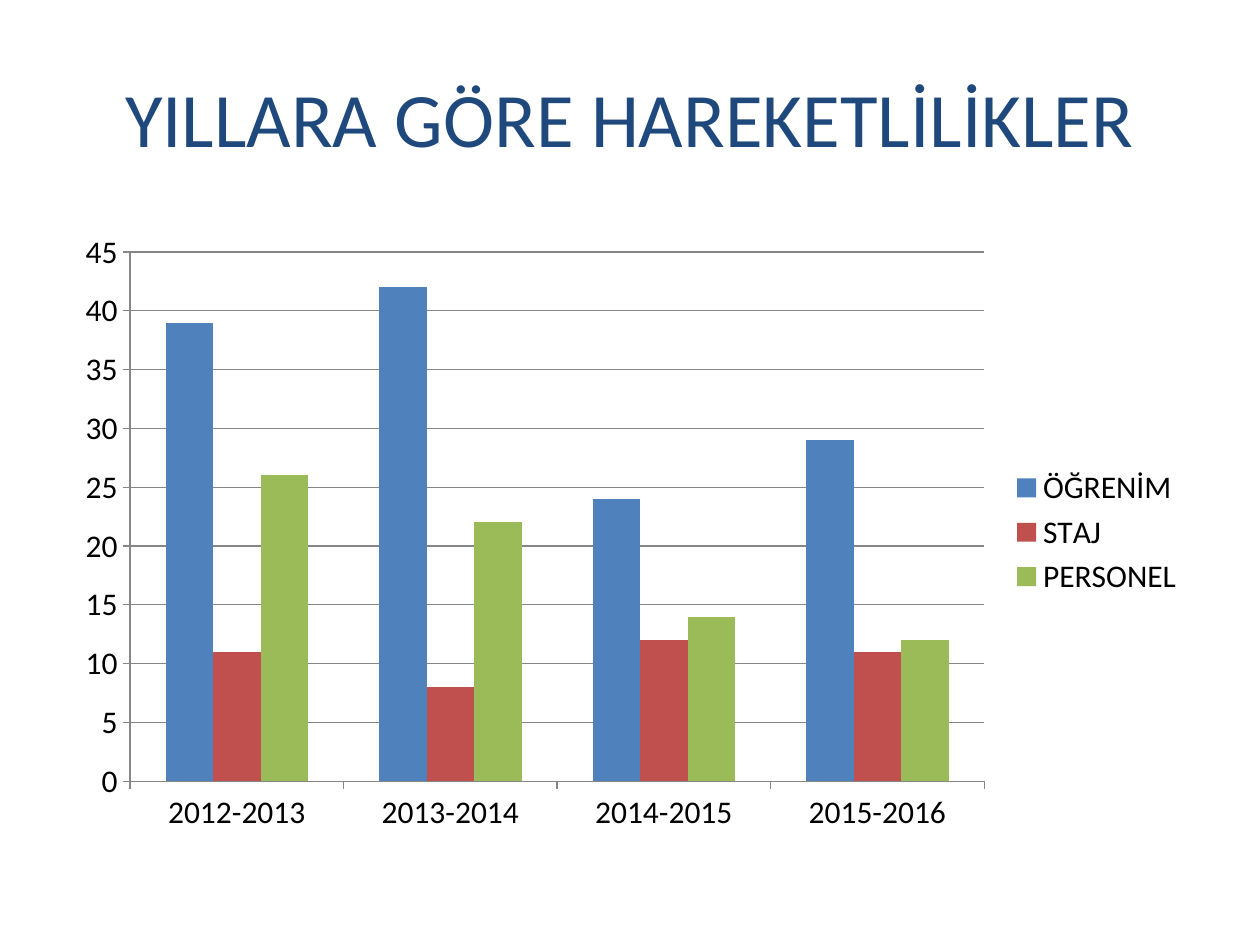
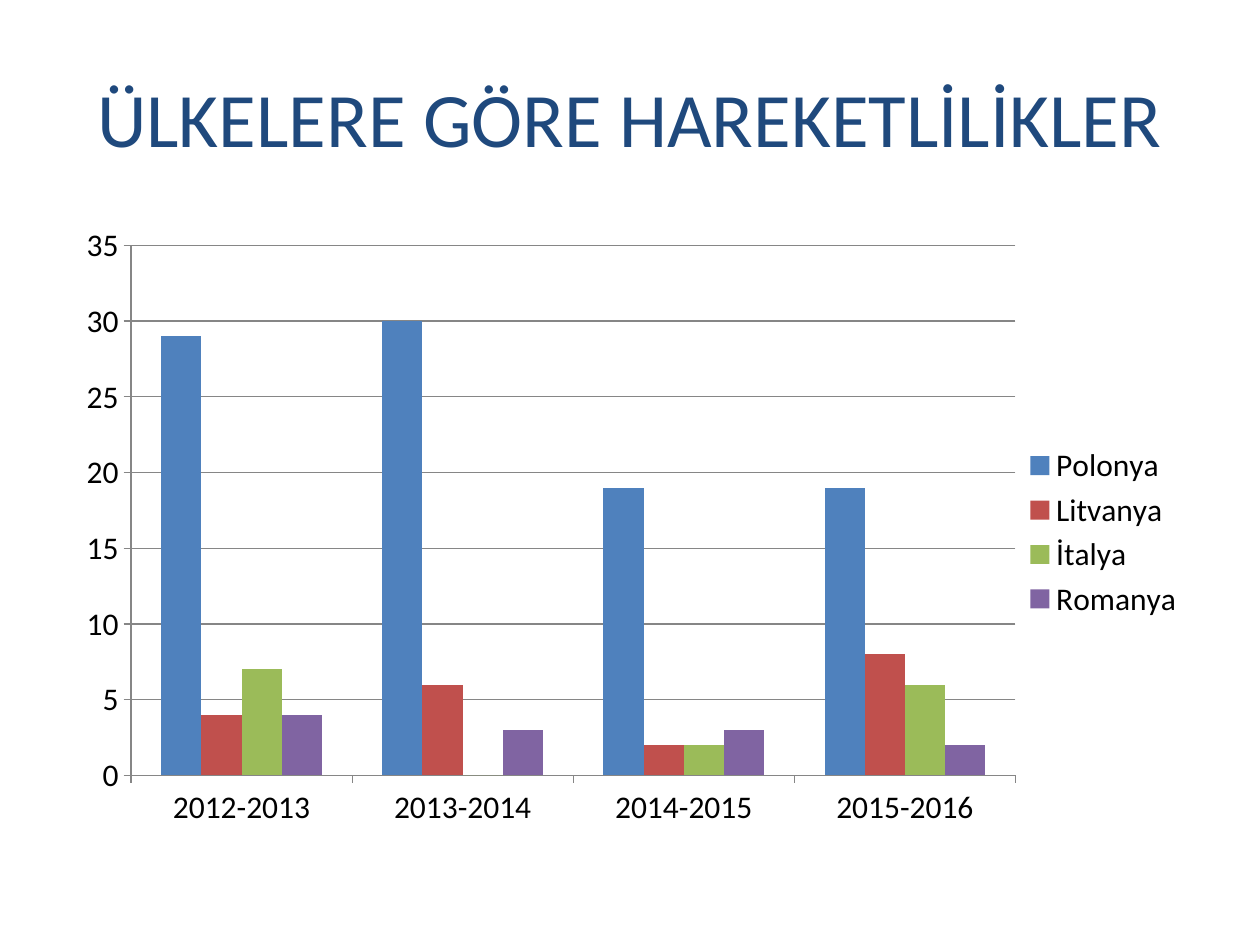
from lxml.etree import SubElement
from pptx import Presentation
from pptx.chart.data import CategoryChartData
from pptx.dml.color import RGBColor
from pptx.enum.chart import XL_CHART_TYPE, XL_LEGEND_POSITION, XL_TICK_MARK
from pptx.enum.text import MSO_ANCHOR, PP_ALIGN
from pptx.oxml.ns import qn
from pptx.util import Pt

# Shared style
FONT = "Calibri"
NAVY = RGBColor(0x1F, 0x49, 0x7D)
BLACK = RGBColor(0x00, 0x00, 0x00)
GRAY = RGBColor(0x86, 0x86, 0x86)
BLUE = RGBColor(0x4F, 0x81, 0xBD)
RED = RGBColor(0xC0, 0x50, 0x4D)
GREEN = RGBColor(0x9B, 0xBB, 0x59)
PURPLE = RGBColor(0x80, 0x64, 0xA2)
SERIES_COLORS = (BLUE, RED, GREEN, PURPLE)

# Boxes in points: left, top, width, height
TITLE_BOX = (36, 21.6, 648, 90)
CHART_BOX = (36, 126, 648, 356.4)

YEARS = ("2012-2013", "2013-2014", "2014-2015", "2015-2016")
BY_YEAR = {
    "ÖĞRENİM": (39, 42, 24, 29),
    "STAJ": (11, 8, 12, 11),
    "PERSONEL": (26, 22, 14, 12),
}
BY_COUNTRY = {
    "Polonya": (29, 30, 19, 19),
    "Litvanya": (4, 6, 2, 8),
    "İtalya": (7, 0, 2, 6),
    "Romanya": (4, 3, 3, 2),
}


def style_font(font, size, color):
    font.name = FONT
    font.size = Pt(size)
    font.bold = False
    font.color.rgb = color


def write_text(tf, text, size=18, color=BLACK, align=PP_ALIGN.LEFT):
    tf.word_wrap = True
    p = tf.paragraphs[0]
    p.alignment = align
    r = p.add_run()
    r.text = text
    style_font(r.font, size, color)


def add_title(s, text, box):
    sp = s.shapes.title
    sp.left, sp.top, sp.width, sp.height = map(Pt, box)
    sp.text_frame.vertical_anchor = MSO_ANCHOR.MIDDLE
    write_text(sp.text_frame, text, size=44, color=NAVY, align=PP_ALIGN.CENTER)


def set_plot_layout(chart, plot_box):
    """Fix the inner plot area, as fractions of the chart box."""
    area = chart.plots[0]._element.getparent()
    for old in area.findall(qn("c:layout")):
        area.remove(old)
    layout = SubElement(area, qn("c:layout"))
    area.insert(0, layout)
    manual = SubElement(layout, qn("c:manualLayout"))
    settings = [("layoutTarget", "inner"), ("xMode", "edge"), ("yMode", "edge")]
    settings += zip("xywh", plot_box)
    for tag, value in settings:
        SubElement(manual, qn(f"c:{tag}")).set("val", str(value))


def add_column_chart(s, series, box, plot_box=None):
    data = CategoryChartData()
    data.categories = YEARS
    for name, values in series.items():
        data.add_series(name, values)
    frame = s.shapes.add_chart(XL_CHART_TYPE.COLUMN_CLUSTERED, *map(Pt, box), data)
    chart = frame.chart
    chart.has_title = False
    style_font(chart.font, 18, BLACK)

    # Columns
    plot = chart.plots[0]
    plot.vary_by_categories = False
    plot.gap_width = 150
    plot.overlap = 0
    for column, color in zip(plot.series, SERIES_COLORS):
        column.format.fill.solid()
        column.format.fill.fore_color.rgb = color

    # Axes and gridlines
    chart.category_axis.has_major_gridlines = False
    chart.value_axis.has_major_gridlines = True
    for axis in (chart.category_axis, chart.value_axis):
        axis.major_tick_mark = XL_TICK_MARK.OUTSIDE
        axis.minor_tick_mark = XL_TICK_MARK.NONE
        axis.format.line.color.rgb = GRAY
        axis.format.line.width = Pt(0.75)
    grid = chart.value_axis.major_gridlines.format.line
    grid.color.rgb = GRAY
    grid.width = Pt(0.75)

    # Legend
    chart.has_legend = True
    chart.legend.position = XL_LEGEND_POSITION.RIGHT
    chart.legend.include_in_layout = False
    if plot_box:
        set_plot_layout(chart, plot_box)


def add_chart_slide(prs, title, series, plot_box=None):
    s = prs.slides.add_slide(prs.slide_layouts[5])
    add_title(s, title, TITLE_BOX)
    add_column_chart(s, series, CHART_BOX, plot_box)


def main():
    prs = Presentation()
    prs.slide_width, prs.slide_height = Pt(720), Pt(540)
    add_chart_slide(prs, "YILLARA GÖRE HAREKETLİLİKLER", BY_YEAR)
    add_chart_slide(prs, "ÜLKELERE GÖRE HAREKETLİLİKLER", BY_COUNTRY,
                    plot_box=(0.06, 0.04, 0.78, 0.85))
    prs.save("out.pptx")


if __name__ == "__main__":
    main()
